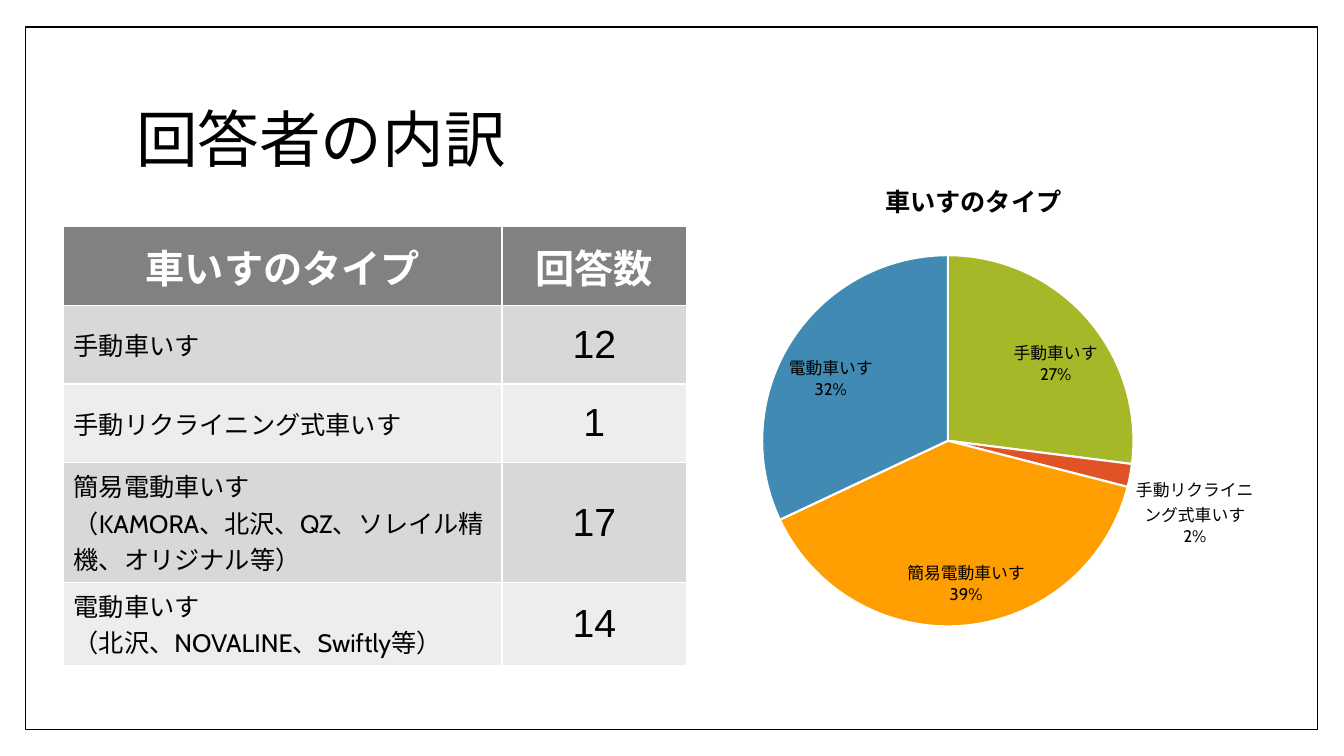
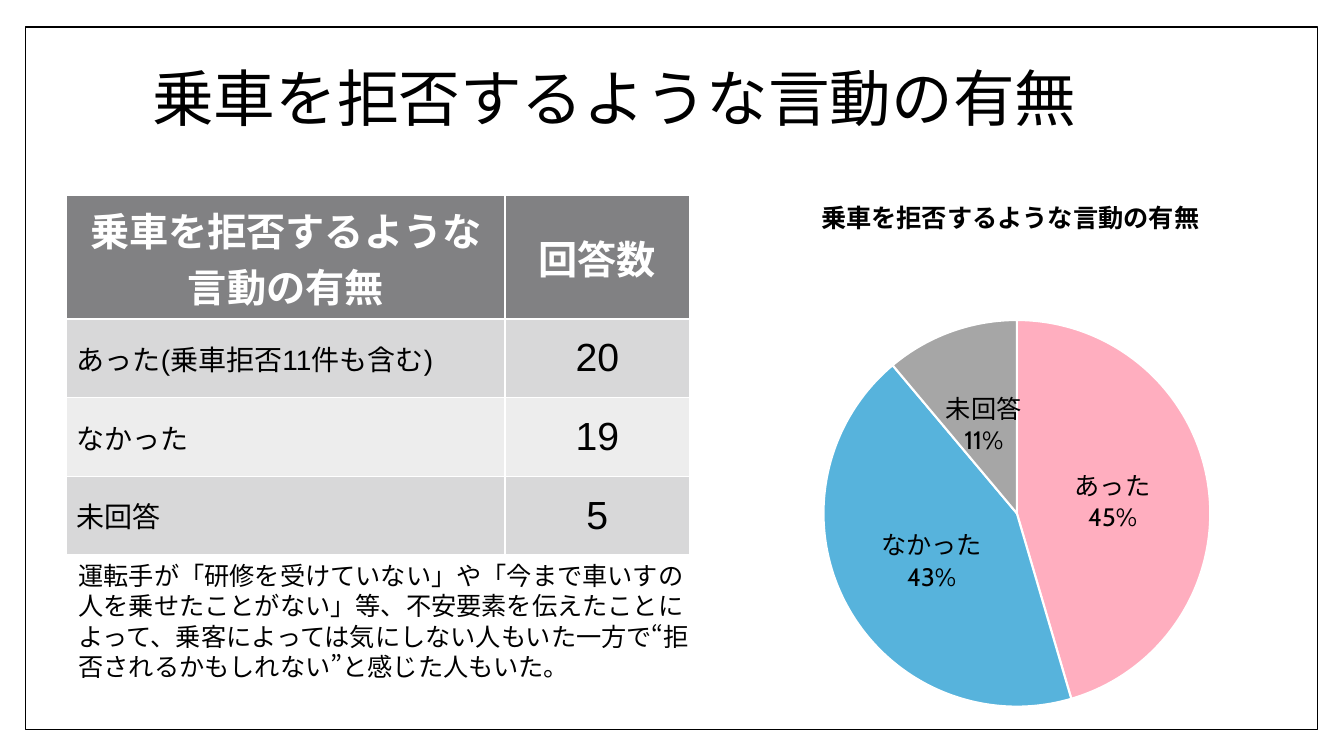
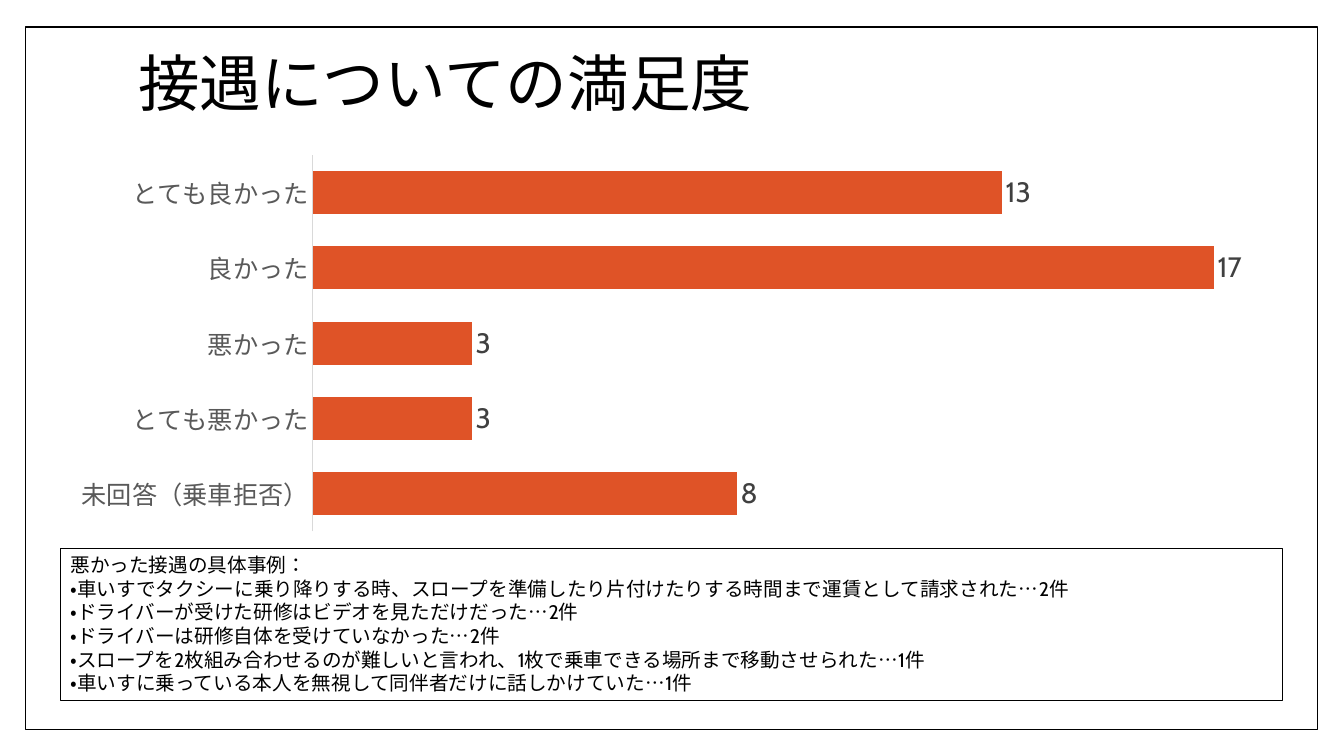
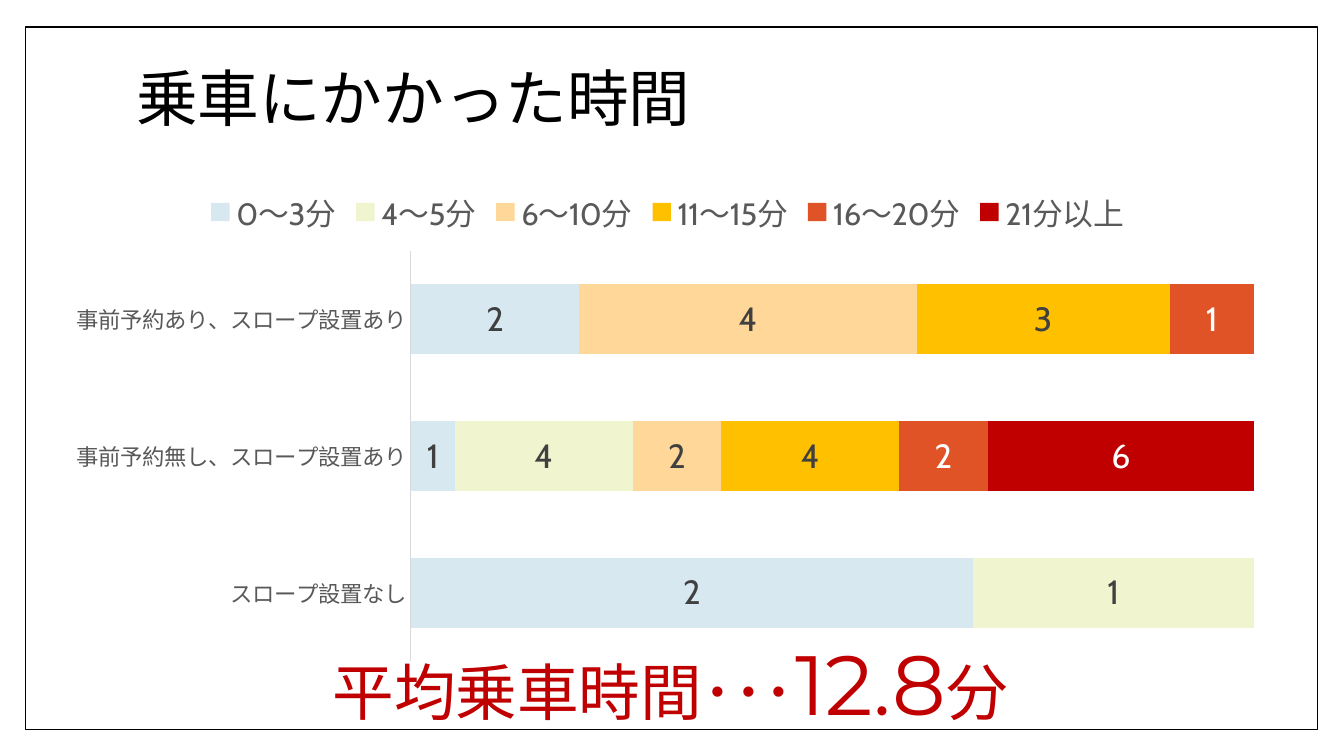
from pptx import Presentation, util as u
from pptx.chart.data import CategoryChartData
from pptx.dml.color import RGBColor
from pptx.enum import chart as ch, lang, shapes, text
from pptx.oxml import parse_xml
from pptx.oxml.ns import nsdecls

Inches, Pt = u.Inches, u.Pt
BLACK, WHITE, GREY, DARK, PALE = "000000", "FFFFFF", "595959", "404040", "D9D9D9"
RED, ORANGE = "C00000", "DF5327"
HEADER, BANDS = "818183", ("D8D8D9", "EDEDED")
CENTER = text.PP_ALIGN.CENTER
TITLE_SIZE = 44


def color(value):
    return RGBColor.from_string(value)


def write(tf, *paras, size=18, font="Cabin", fill=BLACK, bold=False,
          align=text.PP_ALIGN.LEFT, spacing=None):
    """Fill a text frame; a paragraph is a string or a list of (text, size, font)."""
    for i, para in enumerate(paras):
        p = tf.paragraphs[0] if i == 0 else tf.add_paragraph()
        p.alignment, p.line_spacing = align, spacing
        runs = [(para, size, font)] if isinstance(para, str) else para
        for content, run_size, run_font in runs:
            r = p.add_run()
            r.text = content
            r.font.size, r.font.name, r.font.bold = Pt(run_size), run_font, bold
            r.font.color.rgb = color(fill)
            r.font.language_id = lang.MSO_LANGUAGE_ID.JAPANESE


prs = Presentation()
prs.slide_width, prs.slide_height = Inches(13.33), Inches(7.5)
layout = prs.slide_layouts[5]

titles = [
    ("回答者の内訳", "Cabin", (1.25, 0.67, 10.8, 1.48)),
    ("乗車を拒否するような言動の有無", "Cabin", (1.41, 0.29, 10.8, 1.44)),
    ("接遇についての満足度", "Arial", (1.27, 0.27, 10.8, 1.18)),
    ("乗車にかかった時間", "Cabin", (1.25, 0.27, 10.8, 1.48)),
]
for title, font, box in titles:
    s = prs.slides.add_slide(layout)
    sp = s.shapes.title
    sp.left, sp.top, sp.width, sp.height = map(Inches, box)
    sp.text_frame.auto_size = text.MSO_AUTO_SIZE.NONE
    sp.text_frame.vertical_anchor = text.MSO_ANCHOR.MIDDLE
    write(sp.text_frame, title, size=TITLE_SIZE, font=font, spacing=0.9)
types_slide, refusal_slide, service_slide, time_slide = prs.slides

# The frame belongs to the layout, behind every slide
frame = types_slide.shapes.add_shape(
    shapes.MSO_SHAPE.RECTANGLE, Inches(0.25), Inches(0.27), Inches(12.82), Inches(6.97))
frame.shadow.inherit = False
frame.fill.solid()
frame.fill.fore_color.rgb = color(WHITE)
frame.line.color.rgb = color(BLACK)
frame.line.width = Pt(1)
layout.shapes.element.insert(2, frame.element)

# Tables: a header row, then label and count
tables = [
    (types_slide, 0.63, 2.25, 18, "車いすのタイプ", [
        (["手動車いす"], "12"),
        (["手動リクライニング式車いす"], "1"),
        (["簡易電動車いす", "（KAMORA、北沢、QZ、ソレイル精機、オリジナル等）"], "17"),
        (["電動車いす", "（北沢、NOVALINE、Swiftly等）"], "14"),
    ]),
    (refusal_slide, 0.66, 1.94, 20, "乗車を拒否するような言動の有無", [
        ([[("あった", 20, "Cabin"), ("(乗車拒否11件も含む)", 20, "Arial")]], "20"),
        (["なかった"], "19"),
        (["未回答"], "5"),
    ]),
]
for s, left, top, size, heading, rows in tables:
    height = Inches(0.78)
    table = s.shapes.add_table(len(rows) + 1, 2, Inches(left), Inches(top),
                               Inches(6.18), height * (len(rows) + 1)).table
    table.columns[0].width, table.columns[1].width = Inches(4.35), Inches(1.83)
    for row in table.rows:
        row.height = height
    for cell, label in zip(table.rows[0].cells, (heading, "回答数")):
        write(cell.text_frame, label, size=28, fill=WHITE, bold=True, align=CENTER)
    for i, (label, count) in enumerate(rows, 1):
        write(table.cell(i, 0).text_frame, *label, size=size)
        write(table.cell(i, 1).text_frame, count, size=28, font="Arial", align=CENTER)
    for i, row in enumerate(table.rows):
        for cell in row.cells:
            cell.vertical_anchor = text.MSO_ANCHOR.MIDDLE
            cell.fill.solid()
            cell.fill.fore_color.rgb = color(BANDS[(i - 1) % 2] if i else HEADER)

# Charts: plot is the inner plot area as fractions of the chart
PIE, BAR, STACKED = (ch.XL_CHART_TYPE.PIE, ch.XL_CHART_TYPE.BAR_CLUSTERED,
                     ch.XL_CHART_TYPE.BAR_STACKED_100)
LABEL = ch.XL_LABEL_POSITION
charts = [
    dict(slide=types_slide, kind=PIE, box=(6.48, 1.57, 6.35, 5.29), plot=(0.17, 0.18, 0.58, 0.7),
         cats=["手動車いす", "手動リクライニング式車いす", "簡易電動車いす", "電動車いす"],
         series=[("車いすのタイプ", (27, 2, 39, 32), None, BLACK)],
         points=["A6B727", ORANGE, "FE9E00", "418AB3"], size=12, position=LABEL.BEST_FIT),
    dict(slide=refusal_slide, kind=PIE, box=(6.71, 1.73, 6.62, 5.56), plot=(0.22, 0.26, 0.58, 0.69),
         cats=["あった", "なかった", "未回答"],
         series=[("乗車を拒否するような言動の有無", (45, 43, 11), None, BLACK)],
         points=["FFAEBF", "57B3DC", "A6A6A6"], size=18, position=LABEL.CENTER),
    dict(slide=service_slide, kind=BAR, box=(0.52, 1.46, 12.29, 3.89), plot=(0.21, 0.02, 0.77, 0.96),
         cats=["とても良かった", "良かった", "悪かった", "とても悪かった", "未回答（乗車拒否）"],
         series=[("Series 1", (13, 17, 3, 3, 8), ORANGE, DARK)],
         size=20, position=LABEL.OUTSIDE_END, gap=75, top=18, axis=(18, "Noto Sans CJK JP")),
    dict(slide=time_slide, kind=STACKED, box=(0.56, 1.75, 12.12, 4.91), plot=(0.29, 0.15, 0.69, 0.83),
         cats=["事前予約あり、スロープ設置あり", "事前予約無し、スロープ設置あり", "スロープ設置なし"],
         series=[("0～3分", (2, 1, 2), "D8E8F1", DARK),
                 ("4～5分", (None, 4, 1), "F0F5D0", DARK),
                 ("6～10分", (4, 2, None), "FFD899", DARK),
                 ("11～15分", (3, 4, None), "FFC000", DARK),
                 ("16～20分", (1, 2, None), ORANGE, WHITE),
                 ("21分以上", (None, 6, None), RED, WHITE)],
         size=24, position=LABEL.CENTER, gap=95, top=1, axis=(16, "Cabin")),
]
for c in charts:
    data = CategoryChartData()
    data.categories = c["cats"]
    for name, values, _, _ in c["series"]:
        data.add_series(name, values)
    chart = c["slide"].shapes.add_chart(c["kind"], *map(Inches, c["box"]), data).chart
    chart.font.size, chart.font.name = Pt(10), "Cabin"
    chart.font.color.rgb = color(BLACK)
    is_pie = c["kind"] == PIE
    chart.has_title = is_pie
    chart.has_legend = c["kind"] == STACKED
    plot = chart.plots[0]
    plot.vary_by_categories = is_pie

    for series, (name, _, fill, label_color) in zip(plot.series, c["series"]):
        labels = series.data_labels
        labels.show_value = not is_pie
        labels.show_percentage = labels.show_category_name = is_pie
        labels.position = c["position"]
        labels.font.size, labels.font.name = Pt(c["size"]), "Cabin"
        labels.font.color.rgb = color(label_color)
        if fill:
            series.format.fill.solid()
            series.format.fill.fore_color.rgb = color(fill)

    if is_pie:
        write(chart.chart_title.text_frame, name, size=18, bold=True, align=CENTER)
        for i, fill in enumerate(c["points"]):
            fmt = plot.series[0].points[i].format
            fmt.fill.solid()
            fmt.fill.fore_color.rgb = color(fill)
            fmt.line.color.rgb = color(WHITE)
            fmt.line.width = Pt(1.5)
        for flag in chart.element.xpath(".//c:dLbls/c:showBubbleSize"):
            flag.addnext(parse_xml(f'<c:separator {nsdecls("c")}>\n</c:separator>'))
    else:
        plot.gap_width = c["gap"]
        axis = chart.category_axis
        axis.reverse_order = True
        axis.major_tick_mark = ch.XL_TICK_MARK.NONE
        axis.format.line.color.rgb = color(PALE)
        axis.format.line.width = Pt(0.75)
        size, axis.tick_labels.font.name = c["axis"]
        axis.tick_labels.font.size = Pt(size)
        axis.tick_labels.font.color.rgb = color(GREY)
        values = chart.value_axis
        values.visible = values.has_major_gridlines = False
        values.minimum_scale, values.maximum_scale = 0, c["top"]

    if chart.has_legend:
        plot.overlap = 100
        legend = chart.legend
        legend.position = ch.XL_LEGEND_POSITION.TOP
        legend.include_in_layout = False
        legend.font.size, legend.font.name = Pt(22), "Cabin"
        legend.font.color.rgb = color(GREY)

    area = chart.element.xpath("c:chart/c:plotArea")[0]
    for old in area.xpath("c:layout"):
        area.remove(old)
    x, y, w, h = c["plot"]
    area.insert(0, parse_xml(
        f'<c:layout {nsdecls("c")}><c:manualLayout><c:layoutTarget val="inner"/>'
        f'<c:xMode val="edge"/><c:yMode val="edge"/><c:x val="{x}"/><c:y val="{y}"/>'
        f'<c:w val="{w}"/><c:h val="{h}"/></c:manualLayout></c:layout>'))

# Remarks
remark = refusal_slide.shapes.add_textbox(Inches(0.68), Inches(5.51), Inches(6.37), Inches(1.31))
remark.text_frame.word_wrap = True
write(remark.text_frame,
      "運転手が「研修を受けていない」や「今まで車いすの人を乗せたことがない」等、不安要素を伝えたことによって、"
      "乗客によっては気にしない人もいた一方で“拒否されるかもしれない”と感じた人もいた。")

cases = service_slide.shapes.add_textbox(Inches(0.6), Inches(5.44), Inches(12.12), Inches(1.51))
cases.line.color.rgb = color(BLACK)
cases.line.width = Pt(0.75)
cases.text_frame.word_wrap = True
write(cases.text_frame,
      "悪かった接遇の具体事例：",
      "・車いすでタクシーに乗り降りする時、スロープを準備したり片付けたりする時間まで運賃として請求された…2件",
      "・ドライバーが受けた研修はビデオを見ただけだった…2件",
      "・ドライバーは研修自体を受けていなかった…2件",
      "・スロープを2枚組み合わせるのが難しいと言われ、1枚で乗車できる場所まで移動させられた…1件",
      "・車いすに乗っている本人を無視して同伴者だけに話しかけていた…1件",
      size=14)

average = time_slide.shapes.add_textbox(Inches(3.2), Inches(6.22), Inches(7.41), Inches(1.11))
average.text_frame.word_wrap = False
write(average.text_frame,
      [("平均乗車時間･･･", TITLE_SIZE, "Arial"), ("12.8", 60, "Montserrat"), ("分", TITLE_SIZE, "Arial")],
      fill=RED)

prs.save("out.pptx")
